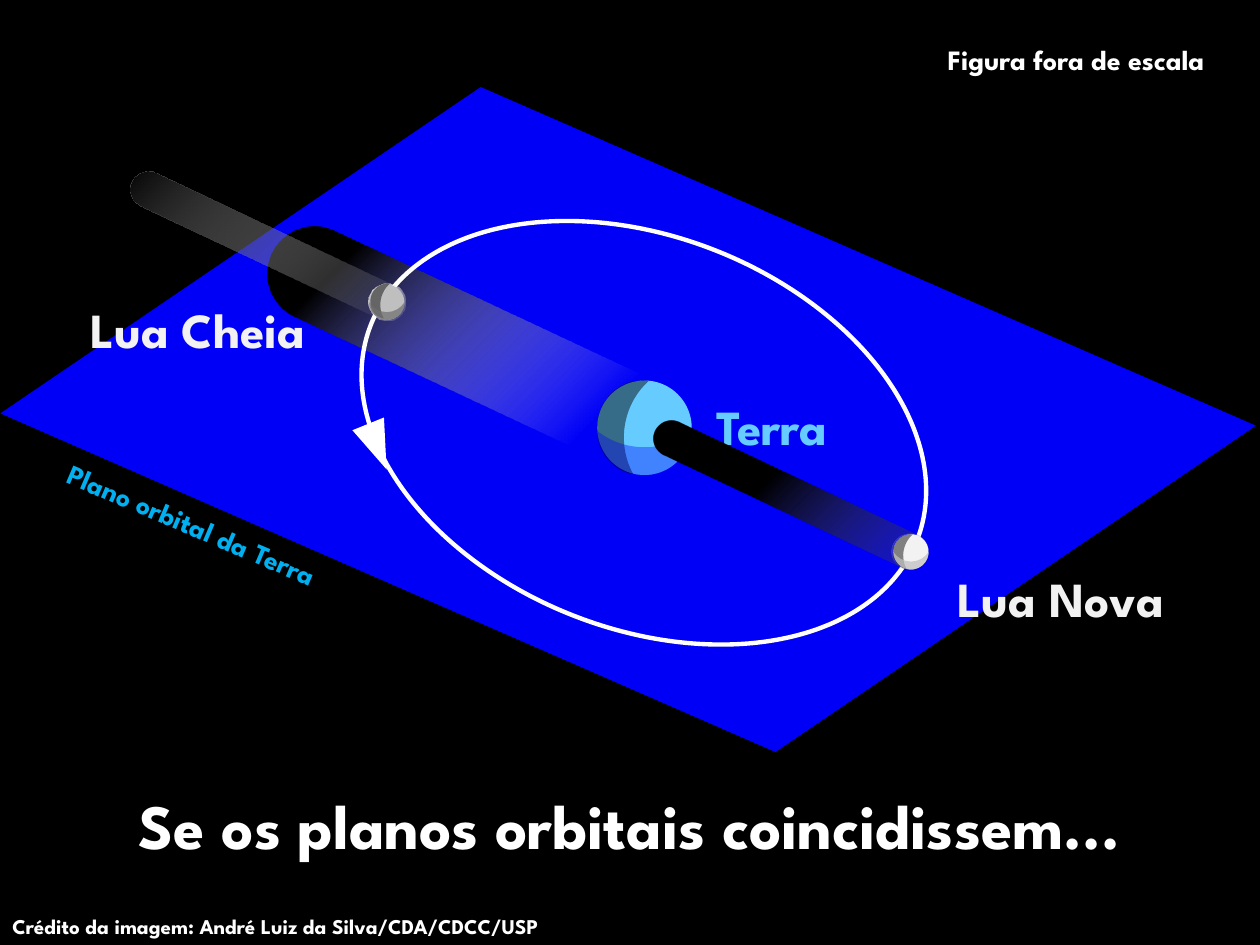
"""Slide on the Moon's shadow if the orbital planes of Moon and Earth coincided."""
import pptx
import pptx.util
import pptx.dml.color
import pptx.enum.shapes
import pptx.enum.text
import pptx.oxml
import pptx.oxml.ns

KIND = pptx.enum.shapes.MSO_SHAPE
TEXT = pptx.enum.text
RGB = pptx.dml.color.RGBColor.from_string
qn = pptx.oxml.ns.qn
THEME = {
    "font": "League Spartan", "space": "000000", "plane": "0000FF", "white": "FFFFFF",
    "earth": "66CCFF", "tag": "00B0F0", "new": "F2F2F2", "full": "BFBFBF",
    "dim": "C0C0C0", "dusk": "707070", "ray": "595959",
    "title": 36, "name": 28, "note": 16, "credit": 12, "orbit": 2.5,
}

deck = pptx.Presentation()
deck.slide_width, deck.slide_height = pptx.util.Inches(10), pptx.util.Inches(7.5)
COL, ROW = deck.slide_width / 100, deck.slide_height / 75
slide = deck.slides.add_slide(deck.slide_layouts[5])
slide.background.fill.solid()
slide.background.fill.fore_color.rgb = RGB(THEME["space"])


def form(home, kind, box, turn, tone=None, alpha=100, adj=None):
    """Add a shape placed in columns and rows, with no outline."""
    left, top, wide, high = box
    shape = home.add_shape(kind, int(left * COL), int(top * ROW), int(wide * COL), int(high * ROW))
    shape.rotation = turn
    shape.shadow.inherit = False
    shape.line.fill.background()
    if adj is not None:
        shape.adjustments[0] = adj
    if tone is None:
        shape.fill.background()
        return shape
    shape.fill.solid()
    shape.fill.fore_color.rgb = RGB(THEME[tone])
    if alpha < 100:
        color = shape.fill._xPr.find(qn("a:solidFill"))[0]
        pptx.oxml.ns.nsdecls("a")
        color.append(pptx.oxml.parse_xml(f'<a:alpha {pptx.oxml.ns.nsdecls("a")} val="{alpha * 1000}"/>'))
    return shape


def write(shape, box, text, size, tone, wrap=True, align=TEXT.PP_ALIGN.CENTER):
    """Place a text shape and set its single line of bold text."""
    left, top, wide, high = box
    shape.left, shape.top = int(left * COL), int(top * ROW)
    shape.width, shape.height = int(wide * COL), int(high * ROW)
    frame = shape.text_frame
    frame.text = text
    frame.word_wrap = wrap
    frame.auto_size = TEXT.MSO_AUTO_SIZE.SHAPE_TO_FIT_TEXT
    frame.vertical_anchor = TEXT.MSO_ANCHOR.TOP
    line = frame.paragraphs[0]
    line.alignment = align
    line.font.name, line.font.bold = THEME["font"], True
    line.font.size = pptx.util.Pt(THEME[size])
    line.font.color.rgb = RGB(THEME[tone])


write(slide.shapes.title, (0, 61.9, 100, 7.1), "Se os planos orbitais coincidissem...", "title", "white")

form(slide.shapes, KIND.PARALLELOGRAM, (4, 13.8, 91.7, 39), 23.6, "plane", 97, 0.63)

SHADES = {
    "earth": ((34.3, 9.7, 7.5, 36.3), 115, [(0, "full", 0), (25, "white", 0), (81, "space", 100)]),
    "new": ((61.3, 27.4, 2.9, 23.8), 115.3, [(0, "full", 0), (0, "ray", 11), (59, "space", 100)]),
    "full": ((19.8, 7.6, 2.9, 23.8), 115.3, [(0, "full", 0), (0, "white", 0), (100, "space", 100)]),
}
BALLS = {
    "earth": ((47.4, 30.2, 7.5, 7.5), (47.4, 29.9, 3.5, 7.5), (49.4, 32.2, 3.5, 7.5), 0.63, "plane", 36),
    "new": ((70.9, 42.4, 2.8, 2.8), (70.9, 42.3, 1.3, 2.8), (71.6, 43.1, 1.4, 2.8), 0.45, "dim", 72),
    "full": ((29.3, 22.6, 2.8, 2.8), (29.4, 22.4, 1.3, 2.8), (30, 23.3, 1.4, 2.8), 0.45, "dusk", 72),
}
for name, (box, turn, stops) in SHADES.items():
    shade = form(slide.shapes, KIND.CAN, box, turn, "space", adj=1)
    marks = "".join(
        f'<a:gs pos="{pos * 1000}"><a:srgbClr val="{THEME[tone]}"><a:alpha val="{alpha * 1000}"/></a:srgbClr></a:gs>'
        for pos, tone, alpha in stops)
    blend = pptx.oxml.parse_xml(
        f'<a:gradFill {pptx.oxml.ns.nsdecls("a")} rotWithShape="1"><a:gsLst>{marks}</a:gsLst>'
        '<a:path path="circle"><a:fillToRect l="100000" t="100000"/></a:path></a:gradFill>')
    solid = shade._element.spPr.find(qn("a:solidFill"))
    solid.getparent().replace(solid, blend)

    disc, night, south, curve, tone, alpha = BALLS[name]
    ball = slide.shapes.add_group_shape().shapes
    form(ball, KIND.OVAL, disc, 351.5, name)
    form(ball, KIND.MOON, night, 9.4, "space", 47, 0.63)
    form(ball, KIND.MOON, south, 270, tone, alpha, curve)

    if name == "earth":
        orbit = form(slide.shapes, KIND.OVAL, (27.8, 18.8, 46.6, 31.1), 21.6)
        orbit.line.color.rgb = RGB(THEME["white"])
        orbit.line.width = pptx.util.Pt(THEME["orbit"])
        label = slide.shapes.add_textbox(0, 0, 0, 0)
        write(label, (55.6, 31, 11.3, 5.7), "Terra", "name", "earth", False)

form(slide.shapes, KIND.ISOSCELES_TRIANGLE, (28.6, 33.5, 2.7, 3.9), 158, "white")

NOTES = [
    ((2.6, 39.8, 25.2, 3.7), 23.2, "Plano orbital da Terra", "note", "tag", False, TEXT.PP_ALIGN.CENTER),
    ((0, 72, 52.8, 3), 0, "Crédito da imagem: André Luiz da Silva/CDA/CDCC/USP", "credit", "white", True,
     TEXT.PP_ALIGN.LEFT),
    ((4.3, 23.3, 22.8, 5.7), 0, "Lua Cheia", "name", "new", True, TEXT.PP_ALIGN.CENTER),
    ((72.8, 44.6, 22.8, 5.7), 0, "Lua Nova", "name", "new", True, TEXT.PP_ALIGN.CENTER),
    ((72.8, 2.9, 25.2, 3.7), 0, "Figura fora de escala", "note", "white", False, TEXT.PP_ALIGN.CENTER),
]
for box, turn, *words in NOTES:
    label = slide.shapes.add_textbox(0, 0, 0, 0)
    label.rotation = turn
    write(label, box, *words)

deck.save("out.pptx")
